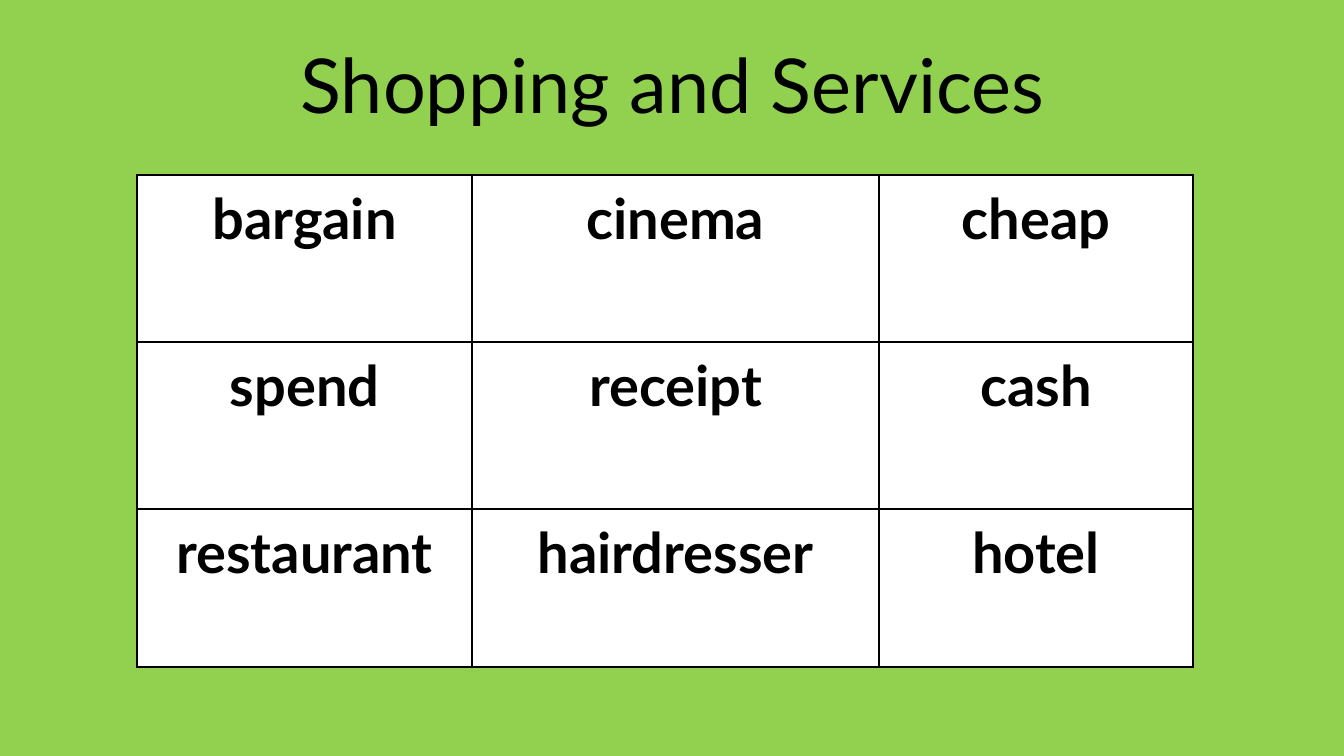
from lxml.etree import SubElement
from pptx import Presentation
from pptx.dml.color import RGBColor
from pptx.enum.text import MSO_ANCHOR as Anchor, PP_ALIGN as Align
from pptx.oxml.ns import qn
from pptx.util import Emu, Pt


def px(length):
    return Emu(round(length * 914400 / 100.8))


def style_text(paragraph, text, size, bold):
    paragraph.text = text
    paragraph.alignment = Align.CENTER
    paragraph.font.name = "Lato"
    paragraph.font.size = Pt(size)
    paragraph.font.bold = bold
    paragraph.font.color.rgb = RGBColor.from_string("000000")


presentation = Presentation()
presentation.slide_width = px(1344)
presentation.slide_height = px(756)
slide = presentation.slides.add_slide(presentation.slide_layouts[6])
slide.background.fill.solid()
slide.background.fill.fore_color.rgb = RGBColor.from_string("92D050")

title = slide.shapes.add_textbox(px(93), px(32), px(1159), px(103))
title.text_frame.word_wrap = True
title.text_frame.vertical_anchor = Anchor.BOTTOM
title_paragraph = title.text_frame.paragraphs[0]
style_text(title_paragraph, "Shopping and Services", 54, False)
title_paragraph.line_spacing = 0.9

words = [
    ["bargain", "cinema", "cheap"],
    ["spend", "receipt", "cash"],
    ["restaurant", "hairdresser", "hotel"],
]
column_widths = [335, 407, 314]
row_heights = [167, 167, 158]

table = slide.shapes.add_table(
    len(row_heights), len(column_widths), px(137), px(175),
    px(sum(column_widths)), px(sum(row_heights)),
).table
for column, width in zip(table.columns, column_widths):
    column.width = px(width)
for row, height in zip(table.rows, row_heights):
    row.height = px(height)

for row_index, row_words in enumerate(words):
    for column_index, word in enumerate(row_words):
        cell = table.cell(row_index, column_index)
        cell.margin_left = cell.margin_right = px(18)
        cell.margin_top = cell.margin_bottom = px(9)
        style_text(cell.text_frame.paragraphs[0], word, 40, True)
        properties = cell._tc.get_or_add_tcPr()
        for side in ("a:lnL", "a:lnR", "a:lnT", "a:lnB"):
            border = SubElement(properties, qn(side), w=str(Pt(1)))
            border_fill = SubElement(border, qn("a:solidFill"))
            SubElement(border_fill, qn("a:srgbClr"), val="000000")
        cell.fill.solid()
        cell.fill.fore_color.rgb = RGBColor.from_string("FFFFFF")

presentation.save("out.pptx")
